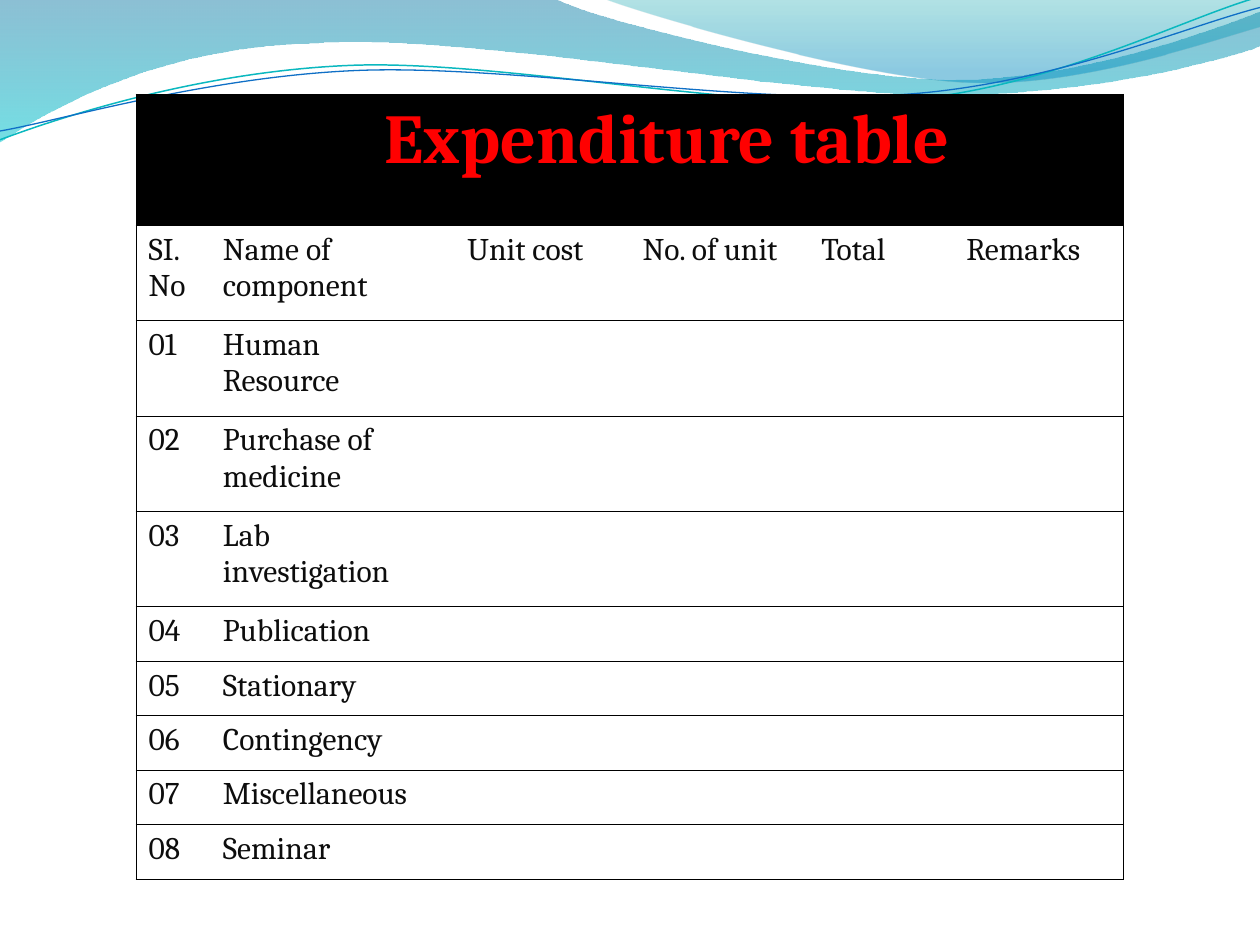
from math import cos, radians, sin

from lxml import etree
from pptx import Presentation
from pptx.dml.color import RGBColor
from pptx.enum.text import PP_ALIGN
from pptx.oxml.ns import qn
from pptx.util import Inches, Pt

CENTER = PP_ALIGN.CENTER
LEFT = PP_ALIGN.LEFT
FONT = "Cambria"
BORDER_WIDTH = Pt(0.75)

COLORS = {
    "black": "000000", "red": "FF0000", "text": "0D0D0D",
    "ocean": "0074A1", "aqua": "00C6CF", "teal": "00A1A9", "sky": "008BBF",
    "teal line": "0AB8BF", "blue line": "0F6FC6",
}

# Each step holds one end point (line) or two handles and an end point (curve), in inches.
BROAD_WAVE = [
    (0, 0), (4.4, -0.01),
    (4.76, 0.17, 6.64, 0.63, 7.58, 0.63), (8.53, 0.63, 9.58, 0.26, 10, 0.09),
    (10.01, 0.36),
    (9.83, 0.44, 8.7, 0.76, 7.46, 0.75), (6.22, 0.75, 3.82, 0.28, 2.57, 0.34),
    (1.29, 0.36, 0.46, 0.83, -0.01, 1.13), (0, 0),
]
CORNER_WAVE = [
    (4.79, -0.01), (5.09, 0.11, 6.82, 0.62, 7.69, 0.65),
    (8.56, 0.69, 9.61, 0.32, 10, 0.21), (10, 0), (4.79, -0.01),
]
TEAL_STRAND = [
    (0, 1.11), (0.48, 0.93, 1.58, 0.57, 2.77, 0.52),
    (3.95, 0.47, 5.93, 0.89, 7.13, 0.8), (8.33, 0.71, 9.38, 0.15, 9.98, -0.02),
]
BLUE_STRAND = [
    (0, 1.04), (0.47, 0.96, 1.64, 0.61, 2.83, 0.56),
    (4.03, 0.51, 5.97, 0.84, 7.17, 0.75), (8.36, 0.67, 9.41, 0.21, 10, 0.06),
]
STRAND_TILT = 2.7
STRAND_PIVOT = (5, 0.58)

TABLE_LEFT, TABLE_TOP, TABLE_HEIGHT = 1.08, 0.75, 6.23
COLUMN_WIDTHS = [0.59, 1.94, 1.39, 1.42, 1.15, 1.35]
TITLE_HEIGHT = 1.04
# Four tall rows and five short ones share the rest; a tall row is 1.75 short ones.
SHORT_ROW = (TABLE_HEIGHT - TITLE_HEIGHT) / (4 * 1.75 + 5)
ROW_HEIGHTS = [TITLE_HEIGHT] + 4 * [1.75 * SHORT_ROW] + 5 * [SHORT_ROW]
HEADINGS = ["SI.\nNo", "Name of component", "Unit cost", "No. of unit", "Total", "Remarks"]
COMPONENTS = [
    "Human Resource", "Purchase of medicine", "Lab investigation", "Publication",
    "Stationary", "Contingency", "Miscellaneous", "Seminar",
]


def rgb(name):
    return RGBColor.from_string(COLORS[name])


def step_points(step):
    return list(zip(step[0::2], step[1::2]))


def turn_step(step, degrees):
    """Turn every point of a step clockwise about the pivot of the strands."""
    cosine, sine = cos(radians(degrees)), sin(radians(degrees))
    pivot_x, pivot_y = STRAND_PIVOT
    turned = []
    for x, y in step_points(step):
        x, y = x - pivot_x, y - pivot_y
        turned += [pivot_x + x * cosine - y * sine, pivot_y + x * sine + y * cosine]
    return tuple(turned)


def add_outline(slide, steps, close):
    """Build a freeform through all points, then join each three-point step into a curve."""
    points = [(Inches(x), Inches(y)) for step in steps for x, y in step_points(step)]
    builder = slide.shapes.build_freeform(*points[0])
    builder.add_line_segments(points[1:], close=close)
    shape = builder.convert_to_shape()
    shape.shadow.inherit = False

    segments = iter(list(shape._element.iter(qn("a:lnTo"))))
    for step in steps[1:]:
        segment = next(segments)
        if len(step) == 6:
            segment.tag = qn("a:cubicBezTo")
            for _ in range(2):
                extra = next(segments)
                segment.append(extra[0])
                extra.getparent().remove(extra)
    return shape


def add_wave(slide, steps, stops):
    """Add a closed area with a downward gradient of (position, colour, opacity) stops."""
    shape = add_outline(slide, steps, True)
    shape.line.fill.background()
    shape.fill.gradient()
    gradient = shape._element.spPr.find(qn("a:gradFill"))
    for child in list(gradient):
        gradient.remove(child)
    stop_list = etree.SubElement(gradient, qn("a:gsLst"))
    for position, color, opacity in stops:
        stop = etree.SubElement(stop_list, qn("a:gs"), pos=str(position * 1000))
        fill = etree.SubElement(stop, qn("a:srgbClr"), val=COLORS[color])
        etree.SubElement(fill, qn("a:alpha"), val=str(opacity * 1000))
    etree.SubElement(gradient, qn("a:lin"), ang="5400000", scaled="0")


def add_strand(slide, steps, color, width):
    """Add an open curve, laid out level and tilted by the rotation of its shape."""
    shape = add_outline(slide, [turn_step(step, STRAND_TILT) for step in steps], False)
    shape.rotation = -STRAND_TILT
    shape.fill.background()
    shape.line.color.rgb = rgb(color)
    shape.line.width = Pt(width)


def set_borders(cell, visible_sides):
    properties = cell._tc.get_or_add_tcPr()
    for index, side in enumerate("LRTB"):
        line = etree.Element(qn(f"a:ln{side}"), w=str(BORDER_WIDTH))
        if side in visible_sides:
            fill = etree.SubElement(line, qn("a:solidFill"))
            etree.SubElement(fill, qn("a:srgbClr"), val=COLORS["black"])
        else:
            etree.SubElement(line, qn("a:noFill"))
        properties.insert(index, line)


def write_cell(cell, text, size=18, color="text", bold=False, alignment=LEFT):
    frame = cell.text_frame
    for index, line in enumerate(text.split("\n")):
        paragraph = frame.add_paragraph() if index else frame.paragraphs[0]
        paragraph.alignment = alignment
        run = paragraph.add_run()
        run.text = line
        run.font.name = FONT
        run.font.size = Pt(size)
        run.font.bold = bold
        run.font.color.rgb = rgb(color)


def add_expenditure_table(slide):
    table = slide.shapes.add_table(
        len(ROW_HEIGHTS), len(COLUMN_WIDTHS), Inches(TABLE_LEFT), Inches(TABLE_TOP),
        Inches(sum(COLUMN_WIDTHS)), Inches(TABLE_HEIGHT)).table
    table.first_row = table.horz_banding = False
    for column, width in zip(table.columns, COLUMN_WIDTHS):
        column.width = Inches(width)
    for row, height in zip(table.rows, ROW_HEIGHTS):
        row.height = Inches(height)

    last_column = len(COLUMN_WIDTHS) - 1
    for row_index, row in enumerate(table.rows):
        for column_index, cell in enumerate(row.cells):
            if row_index == 0:
                cell.fill.solid()
                cell.fill.fore_color.rgb = rgb("black")
            else:
                cell.fill.background()
            sides = "TB" + "L" * (column_index == 0) + "R" * (column_index == last_column)
            set_borders(cell, "LRTB" if row_index == 0 else sides)

    title = table.cell(0, 1)
    title.merge(table.cell(0, last_column))
    write_cell(title, "Expenditure table", 40, "red", True, CENTER)
    for column_index, heading in enumerate(HEADINGS):
        write_cell(table.cell(1, column_index), heading)
    for number, component in enumerate(COMPONENTS, start=1):
        write_cell(table.cell(number + 1, 0), f"{number:02d}")
        write_cell(table.cell(number + 1, 1), component)


def main():
    presentation = Presentation()
    presentation.slide_width = Inches(10)
    presentation.slide_height = Inches(7.5)
    slide = presentation.slides.add_slide(presentation.slide_layouts[6])
    add_wave(slide, BROAD_WAVE, [(0, "ocean", 45), (100, "aqua", 55)])
    add_wave(slide, CORNER_WAVE, [(0, "teal", 30), (80, "sky", 45)])
    add_strand(slide, TEAL_STRAND, "teal line", 0.85)
    add_strand(slide, BLUE_STRAND, "blue line", 0.75)
    add_expenditure_table(slide)
    presentation.save("out.pptx")


if __name__ == "__main__":
    main()
